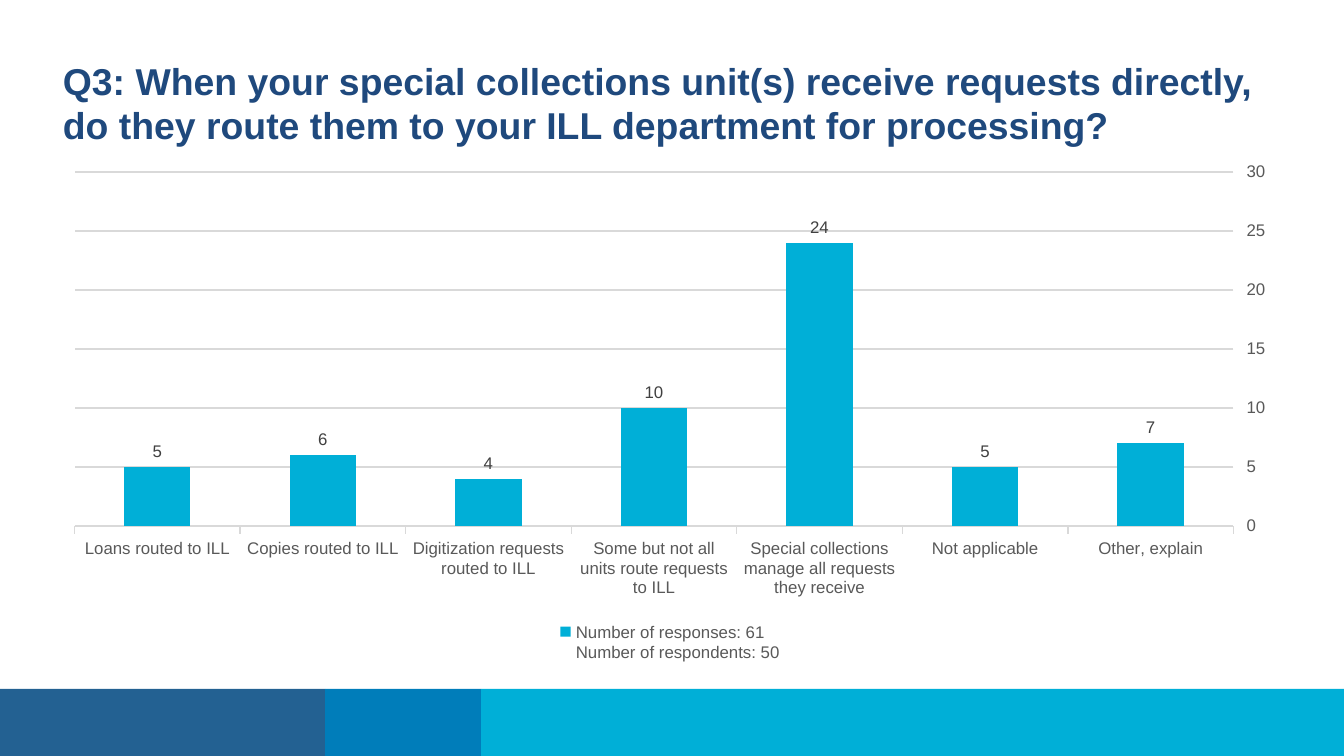
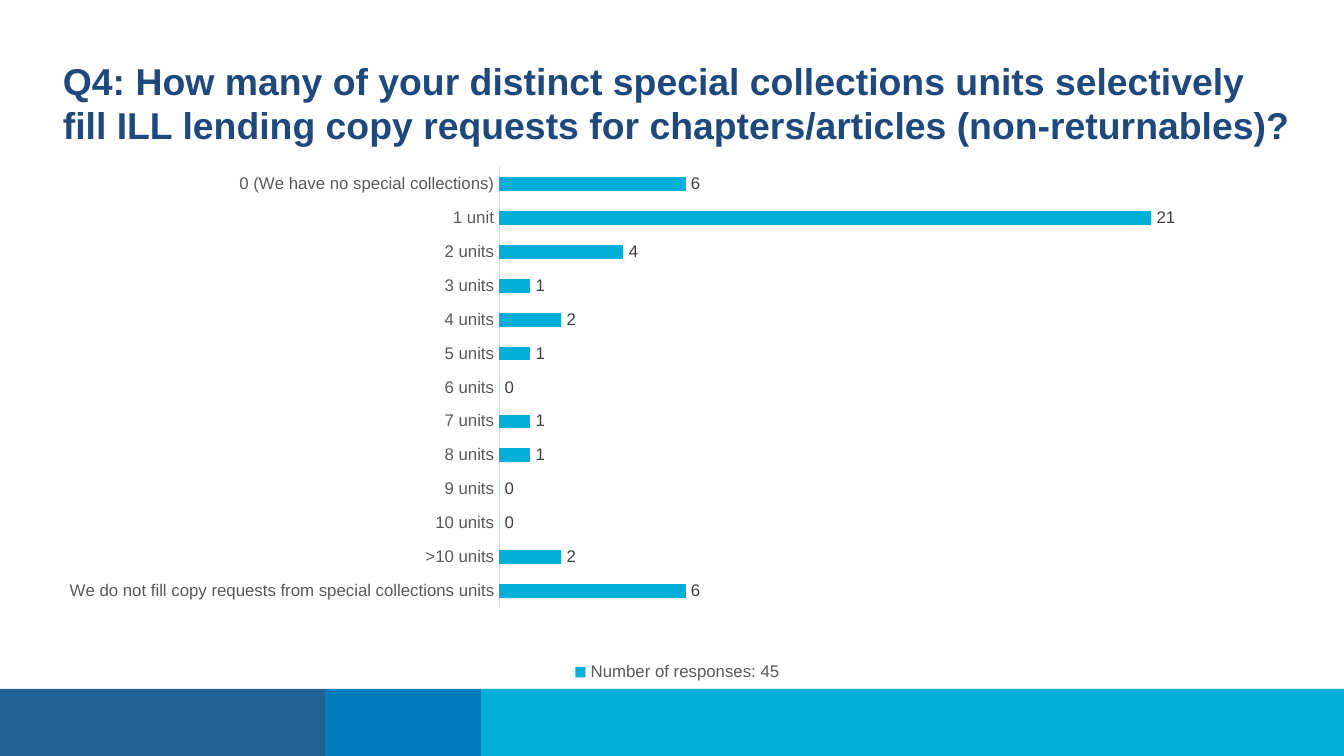
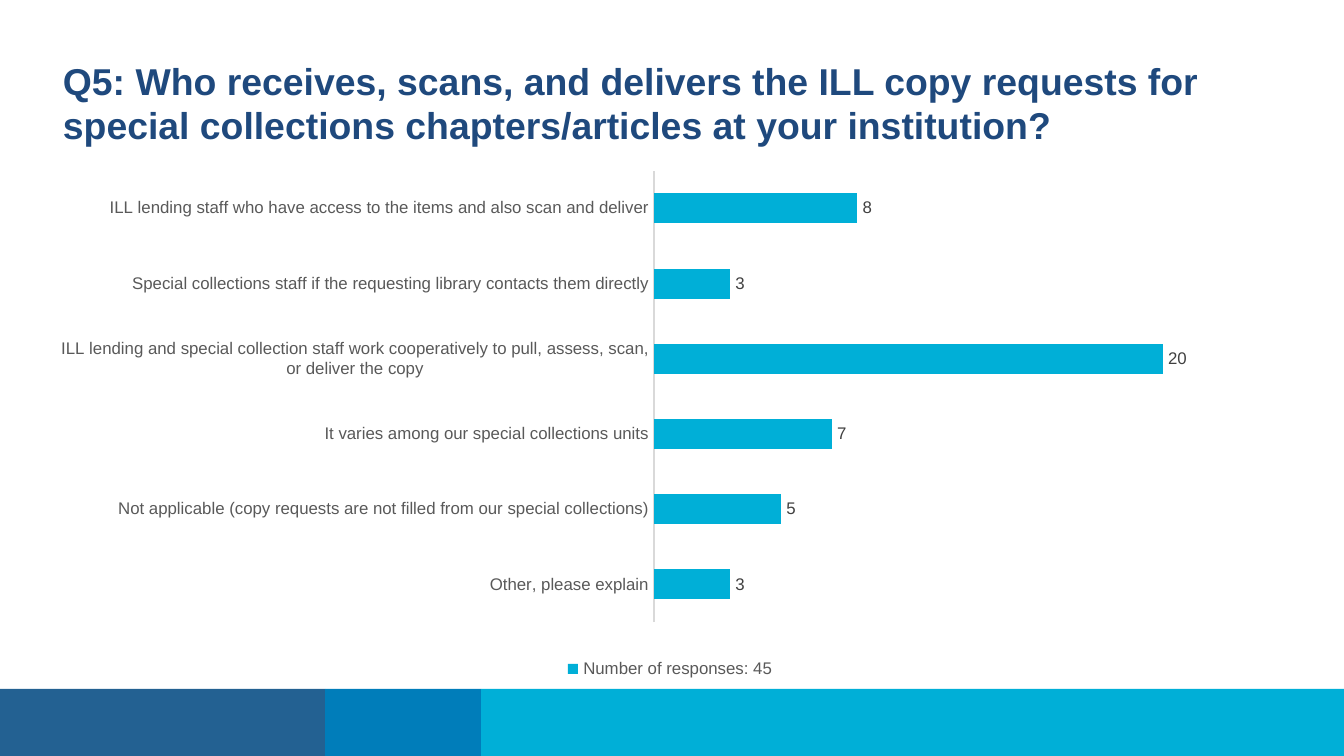
from lxml import etree
from pptx import Presentation
from pptx.chart.data import CategoryChartData
from pptx.dml.color import RGBColor
from pptx.enum import chart as kinds, shapes
from pptx.oxml import parse_xml
from pptx.oxml.ns import nsdecls, qn
from pptx.util import Inches, Pt

FONT = "Arial"
NAVY = RGBColor(0x1F, 0x49, 0x7D)
DEEP_BLUE = RGBColor(0x23, 0x61, 0x92)
BLUE = RGBColor(0x00, 0x7D, 0xBA)
CYAN = RGBColor(0x00, 0xAF, 0xD7)
GRAY = RGBColor(0x59, 0x59, 0x59)
DARK_GRAY = RGBColor(0x40, 0x40, 0x40)
LIGHT_GRAY = RGBColor(0xD9, 0xD9, 0xD9)
BLACK = RGBColor(0x00, 0x00, 0x00)
WHITE = RGBColor(0xFF, 0xFF, 0xFF)

SLIDE_WIDTH = 10
SLIDE_HEIGHT = SLIDE_WIDTH * 9 / 16
LEFT = 0.37
BAND_HEIGHT = 0.5
BANDS = [(2.42, DEEP_BLUE), (1.16, BLUE), (6.42, CYAN)]

QUESTIONS = [
    {
        "title": "Q3: When your special collections unit(s) receive requests directly, "
                 "do they route them to your ILL department for processing?",
        "width": 9.23, "chart_top": 1.13, "chart_height": 3.84,
        "kind": kinds.XL_CHART_TYPE.COLUMN_CLUSTERED, "axis_max": 30,
        "legend": "Number of responses: 61\nNumber of respondents: 50",
        "answers": [
            ("Other, explain", 7),
            ("Not applicable", 5),
            ("Special collections manage all requests they receive", 24),
            ("Some but not all units route requests to ILL", 10),
            ("Digitization requests routed to ILL", 4),
            ("Copies routed to ILL", 6),
            ("Loans routed to ILL", 5),
        ],
    },
    {
        "title": "Q4: How many of your distinct special collections units selectively "
                 "fill ILL lending copy requests for chapters/articles (non-returnables)?",
        "width": 9.34, "chart_top": 0.82, "chart_height": 4.3,
        "kind": kinds.XL_CHART_TYPE.BAR_CLUSTERED, "axis_max": 25,
        "plot": (0.358, 0.098, 0.619, 0.764), "border": WHITE,
        "legend": "Number of responses: 45",
        "answers": [
            ("0 (We have no special collections)", 6),
            ("1 unit", 21),
            ("2 units", 4),
            ("3 units", 1),
            ("4 units", 2),
            ("5 units", 1),
            ("6 units", 0),
            ("7 units", 1),
            ("8 units", 1),
            ("9 units", 0),
            ("10 units", 0),
            (">10 units", 2),
            ("We do not fill copy requests from special collections units", 6),
        ],
    },
    {
        "title": "Q5: Who receives, scans, and delivers the ILL copy requests for "
                 "special collections chapters/articles at your institution?",
        "width": 9.23, "chart_top": 1.12, "chart_height": 3.97,
        "kind": kinds.XL_CHART_TYPE.BAR_CLUSTERED, "axis_max": 25,
        "plot": (0.487, 0.038, 0.513, 0.846),
        "legend": "Number of responses: 45",
        "answers": [
            ("ILL lending staff who have access to the items and also scan and deliver", 8),
            ("Special collections staff if the requesting library contacts them directly", 3),
            ("ILL lending and special collection staff work cooperatively to pull, assess, "
             "scan, or deliver the copy", 20),
            ("It varies among our special collections units", 7),
            ("Not applicable (copy requests are not filled from our special collections)", 5),
            ("Other, please explain", 3),
        ],
    },
]


def style_font(font, size, color, bold=False):
    font.name, font.size, font.bold = FONT, Pt(size), bold
    font.color.rgb = color


def style_line(line, color):
    line.color.rgb = color
    line.width = Pt(0.75)


def move_bands_to_layout(page):
    """Draw the footer bands on a page, then hand them to its layout."""
    layout = page.slide_layout
    for placeholder in list(layout.placeholders):
        layout.shapes.element.remove(placeholder.element)
    left = 0
    for width, color in BANDS:
        band = page.shapes.add_shape(
            shapes.MSO_SHAPE.RECTANGLE, Inches(left), Inches(SLIDE_HEIGHT - BAND_HEIGHT),
            Inches(width), Inches(BAND_HEIGHT))
        band.shadow.inherit = False
        band.fill.solid()
        band.fill.fore_color.rgb = color
        band.line.fill.background()
        layout.shapes.element.append(band.element)
        left += width


def add_title(page, question):
    box = page.shapes.add_textbox(Inches(LEFT), Inches(0.38),
                                  Inches(question["width"]), Inches(0.75))
    box.text_frame.word_wrap = True
    box.text_frame.text = question["title"]
    para = box.text_frame.paragraphs[0]
    para.line_spacing = Pt(24)
    style_font(para.runs[0].font, 20, NAVY, bold=True)


def set_frame(chart, border):
    """Make the chart area clear, with a border if a colour is given."""
    paint = (f'<a:solidFill><a:srgbClr val="{border}"/></a:solidFill>'
             if border else "<a:noFill/>")
    frame = parse_xml(f'<c:spPr {nsdecls("c", "a")}><a:noFill/>'
                      f'<a:ln w="{Pt(0.75)}">{paint}</a:ln></c:spPr>')
    chart.element.find(qn("c:chart")).addnext(frame)


def place_plot(chart, plot):
    """Fix the inner plot area as fractions of the chart: left, top, width, height."""
    area = chart.element.find(qn("c:chart")).find(qn("c:plotArea"))
    for layout in area.findall(qn("c:layout")):
        area.remove(layout)
    layout = etree.Element(qn("c:layout"))
    manual = etree.SubElement(layout, qn("c:manualLayout"))
    settings = [("layoutTarget", "inner"), ("xMode", "edge"), ("yMode", "edge")]
    for name, value in settings + list(zip("xywh", plot)):
        etree.SubElement(manual, qn(f"c:{name}")).set("val", str(value))
    area.insert(0, layout)


def style_axes(chart, question):
    is_column = question["kind"] == kinds.XL_CHART_TYPE.COLUMN_CLUSTERED
    marks = kinds.XL_TICK_MARK
    categories, values = chart.category_axis, chart.value_axis
    categories.reverse_order = True
    categories.has_major_gridlines = False
    categories.major_tick_mark = marks.OUTSIDE if is_column else marks.NONE
    style_font(categories.tick_labels.font, 9, GRAY)
    style_line(categories.format.line, LIGHT_GRAY)

    values.minimum_scale, values.maximum_scale = 0, question["axis_max"]
    values.major_unit = 5
    values.has_major_gridlines = values.visible = is_column
    if is_column:
        values.major_tick_mark = marks.OUTSIDE
        style_font(values.tick_labels.font, 9, GRAY)
        values.format.line.fill.background()
        style_line(values.major_gridlines.format.line, LIGHT_GRAY)


def add_answer_chart(page, question):
    names, counts = zip(*question["answers"])
    data = CategoryChartData()
    data.categories = names
    data.add_series(question["legend"], counts)
    chart = page.shapes.add_chart(
        question["kind"], Inches(LEFT), Inches(question["chart_top"]),
        Inches(question["width"]), Inches(question["chart_height"]), data).chart
    style_font(chart.font, 10, BLACK)
    chart.has_title = False
    chart.has_legend = True
    chart.legend.position = kinds.XL_LEGEND_POSITION.BOTTOM
    chart.legend.include_in_layout = False
    style_font(chart.legend.font, 9, GRAY)
    style_axes(chart, question)

    bars = chart.plots[0]
    bars.vary_by_categories = False
    bars.gap_width = 150
    series = bars.series[0]
    series.format.fill.solid()
    series.format.fill.fore_color.rgb = CYAN
    labels = series.data_labels
    labels.show_value = True
    labels.position = kinds.XL_LABEL_POSITION.OUTSIDE_END
    style_font(labels.font, 9, DARK_GRAY)

    set_frame(chart, question.get("border"))
    if "plot" in question:
        bars.overlap = -25
        place_plot(chart, question["plot"])


def main():
    deck = Presentation()
    deck.slide_width, deck.slide_height = Inches(SLIDE_WIDTH), Inches(SLIDE_HEIGHT)
    blank = deck.slide_layouts[6]
    for number, question in enumerate(QUESTIONS):
        page = deck.slides.add_slide(blank)
        if number == 0:
            move_bands_to_layout(page)
        add_title(page, question)
        add_answer_chart(page, question)
    deck.save("out.pptx")


if __name__ == "__main__":
    main()
